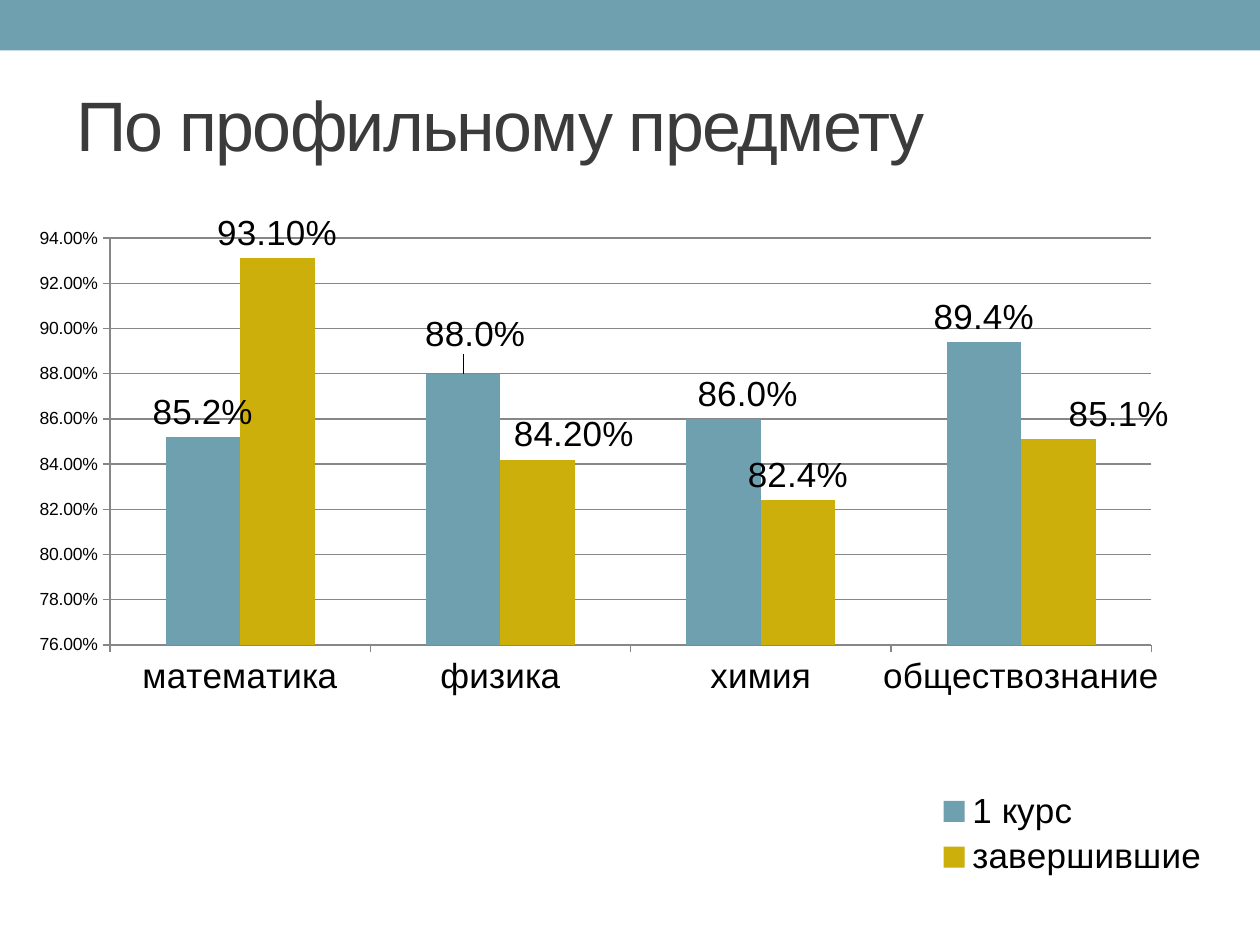
from dataclasses import dataclass

from lxml.etree import fromstring
from pptx import Presentation
from pptx.chart.data import CategoryChartData
from pptx.dml.color import RGBColor
from pptx.enum.chart import XL_CHART_TYPE, XL_LABEL_POSITION, XL_LEGEND_POSITION, XL_TICK_MARK
from pptx.enum.shapes import MSO_SHAPE
from pptx.enum.text import MSO_ANCHOR
from pptx.util import Pt

C_NS = "http://schemas.openxmlformats.org/drawingml/2006/chart"


@dataclass(frozen=True)
class Theme:
    """Colours, font and type sizes of the slide."""
    teal: RGBColor = RGBColor.from_string("6EA0B0")
    gold: RGBColor = RGBColor.from_string("CCAF0A")
    ink: RGBColor = RGBColor.from_string("3B3B3B")
    black: RGBColor = RGBColor.from_string("000000")
    grid: RGBColor = RGBColor.from_string("878787")
    font: str = "Arial"
    title: int = 40
    body: int = 20
    scale: int = 10


THEME = Theme()
SUBJECTS = ["математика", "физика", "химия", "обществознание"]
SERIES = [
    ("1 курс", [0.852, 0.88, 0.86, 0.894], THEME.teal, "0.0%",
     {1: (0.01, -0.02, "0.0%"), 2: (0.02, 0, "0.0%")}),
    ("завершившие", [0.931, 0.842, 0.824, 0.851], THEME.gold, "0.00%",
     {1: (0.03, 0, "0.00%"), 2: (0, 0, "0.0%"), 3: (0.05, 0, "0.0%")}),
]


def manual_layout(x, y, w=None, h=None, inner=False):
    """Return a chart layout element; without a size it is an offset."""
    tags = [("layoutTarget", "inner")] if inner else []
    if w is not None:
        tags += [("xMode", "edge"), ("yMode", "edge")]
    tags += [("x", x), ("y", y)]
    if w is not None:
        tags += [("w", w), ("h", h)]
    body = "".join(f'<c:{tag} val="{val}"/>' for tag, val in tags)
    return fromstring(f'<c:layout xmlns:c="{C_NS}"><c:manualLayout>{body}</c:manualLayout></c:layout>')


def point_label(idx, dx, dy, fmt):
    """Return a value label moved by a fraction of the chart."""
    flags = "".join(
        f'<c:show{name} val="{int(name == "Val")}"/>'
        for name in ("LegendKey", "Val", "CatName", "SerName", "Percent", "BubbleSize"))
    label = fromstring(
        f'<c:dLbl xmlns:c="{C_NS}"><c:idx val="{idx}"/>'
        f'<c:numFmt formatCode="{fmt}" sourceLinked="0"/>'
        f'<c:dLblPos val="outEnd"/>{flags}</c:dLbl>')
    label.insert(1, manual_layout(dx, dy))
    return label


def set_font(font, size, color):
    """Apply the theme typeface with a size and colour."""
    font.name, font.size = THEME.font, Pt(size)
    font.color.rgb = color


def add_band(slide, left, top, width, height):
    """Draw the coloured band along the top edge."""
    s = slide.shapes.add_shape(MSO_SHAPE.RECTANGLE, Pt(left), Pt(top), Pt(width), Pt(height))
    s.shadow.inherit = False
    s.fill.solid()
    s.fill.fore_color.rgb = THEME.teal
    s.line.fill.background()


def add_title(slide, left, top, width, height):
    """Place the heading, centred vertically in its box."""
    tf = slide.shapes.add_textbox(Pt(left), Pt(top), Pt(width), Pt(height)).text_frame
    tf.word_wrap = True
    tf.vertical_anchor = MSO_ANCHOR.MIDDLE
    p = tf.paragraphs[0]
    r = p.add_run()
    r.text = "По профильному предмету"
    set_font(p.font, THEME.title, THEME.ink)
    r.font._element.set("spc", "-100")


def style_axes(chart):
    """Set the scale, tick marks, grid and axis fonts."""
    value, category = chart.value_axis, chart.category_axis
    value.minimum_scale, value.maximum_scale, value.major_unit = 0.76, 0.94, 0.02
    value.tick_labels.number_format = "0.00%"
    value.tick_labels.number_format_is_linked = False
    value.has_major_gridlines = True
    value.major_gridlines.format.line.color.rgb = THEME.grid
    value.major_gridlines.format.line.width = Pt(0.75)
    for axis, size in ((value, THEME.scale), (category, THEME.body)):
        axis.major_tick_mark = XL_TICK_MARK.OUTSIDE
        axis.minor_tick_mark = XL_TICK_MARK.NONE
        axis.format.line.color.rgb = THEME.grid
        axis.format.line.width = Pt(0.75)
        set_font(axis.tick_labels.font, size, THEME.black)


def style_series(series, color, fmt, moved):
    """Colour one series and label its columns."""
    series.format.fill.solid()
    series.format.fill.fore_color.rgb = color
    series.invert_if_negative = False
    labels = series.data_labels
    labels.show_value = True
    labels.number_format, labels.number_format_is_linked = fmt, False
    labels.position = XL_LABEL_POSITION.OUTSIDE_END
    set_font(labels.font, THEME.body, THEME.black)
    for pos, (idx, label) in enumerate(moved.items()):
        labels._element.insert(pos, point_label(idx, *label))


def add_results_chart(slide, left, top, width, height):
    """Place the column chart of results by subject."""
    data = CategoryChartData(number_format="0.00%")
    data.categories = SUBJECTS
    for name, values, *_ in SERIES:
        data.add_series(name, values)
    chart = slide.shapes.add_chart(
        XL_CHART_TYPE.COLUMN_CLUSTERED, Pt(left), Pt(top), Pt(width), Pt(height), data).chart
    chart.has_title = False
    set_font(chart.font, THEME.body, THEME.black)
    plot = chart.plots[0]
    plot.gap_width, plot.overlap, plot.vary_by_categories = 150, 0, False
    for series, (_, _, color, fmt, moved) in zip(plot.series, SERIES):
        style_series(series, color, fmt, moved)
    style_axes(chart)
    chart.has_legend = True
    legend = chart.legend
    legend.position, legend.include_in_layout = XL_LEGEND_POSITION.RIGHT, False
    set_font(legend.font, THEME.body, THEME.black)
    area = chart._chartSpace.chart.plotArea
    for old in area.findall(f"{{{C_NS}}}layout"):
        area.remove(old)
    area.insert(0, manual_layout(0.07, 0.03, 0.86, 0.58, inner=True))
    for old in legend._element.findall(f"{{{C_NS}}}layout"):
        legend._element.remove(old)
    legend._element.insert(1, manual_layout(0.75, 0.81, 0.23, 0.14))


def main():
    """Build and save the slide."""
    prs = Presentation()
    prs.slide_width, prs.slide_height = Pt(720), Pt(540)
    slide = prs.slides.add_slide(prs.slide_layouts[6])
    add_band(slide, 0, 0, 720, 28.8)
    add_title(slide, 36.5, 31.5, 659, 78)
    add_results_chart(slide, 14.4, 122.4, 692, 402.5)
    prs.save("out.pptx")


if __name__ == "__main__":
    main()
